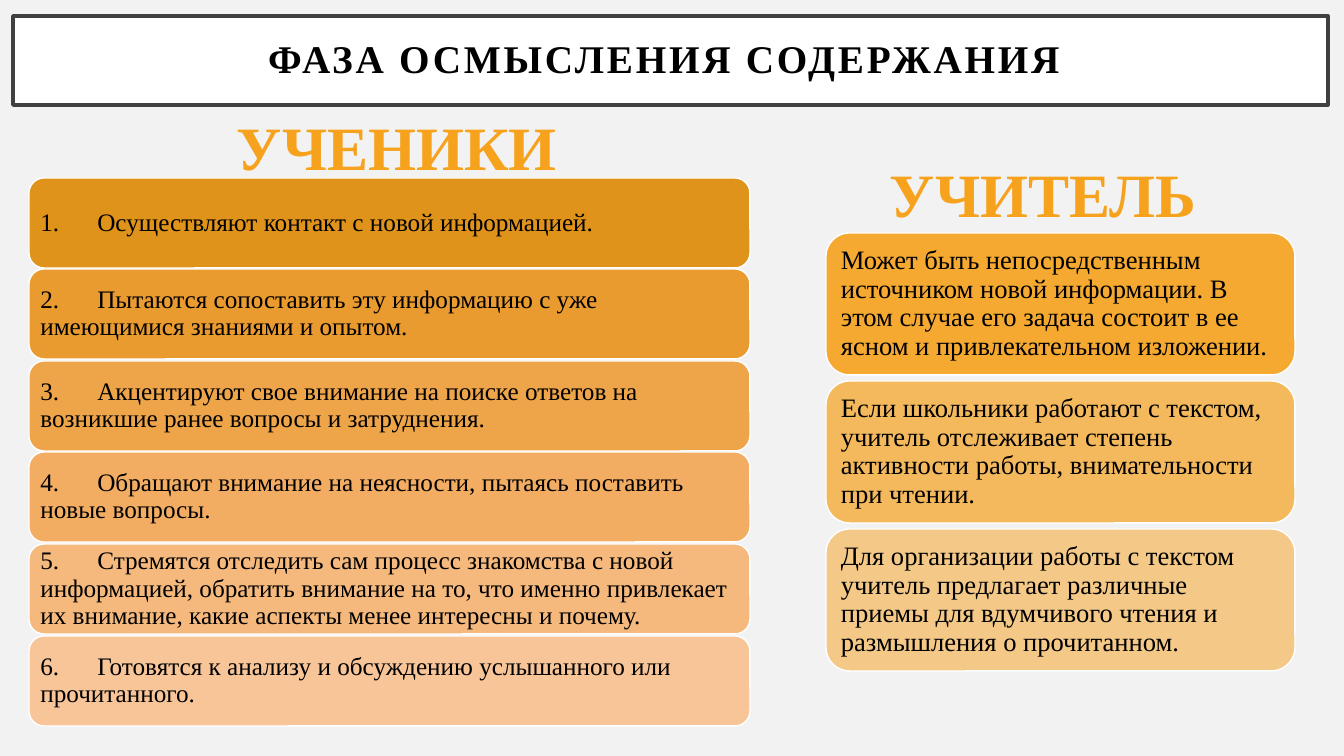
from lxml.etree import SubElement
from pptx import Presentation
from pptx.dml.color import RGBColor
from pptx.enum.shapes import MSO_SHAPE as Shape
from pptx.enum.text import MSO_ANCHOR as Anchor, PP_ALIGN as Align
from pptx.oxml.ns import qn
from pptx.util import Pt

EMU_PER_PX = 914400 / 100.8
ORANGE = "F6A21D"

STUDENTS = [
    ("Осуществляют контакт с новой информацией.", "DF931A"),
    ("Пытаются сопоставить эту информацию с уже имеющимися знаниями и опытом.",
     "E99B2F"),
    ("Акцентируют свое внимание на поиске ответов на возникшие ранее вопросы "
     "и затруднения.", "EEA449"),
    ("Обращают внимание на неясности, пытаясь поставить новые вопросы.",
     "F2AD63"),
    ("Стремятся отследить сам процесс знакомства с новой информацией, "
     "обратить внимание на то, что именно привлекает их внимание, какие "
     "аспекты менее интересны и почему.", "F5B97D"),
    ("Готовятся к анализу и обсуждению услышанного или прочитанного.",
     "F8C599"),
]
TEACHER = [
    ("Может быть непосредственным источником новой информации. В этом случае "
     "его задача состоит в ее ясном и привлекательном изложении.", 90),
    ("Если школьники работают с текстом, учитель отслеживает степень "
     "активности работы, внимательности при чтении.", 70),
    ("Для организации работы с текстом учитель предлагает различные приемы "
     "для вдумчивого чтения и размышления о прочитанном.", 50),
]


def px(length):
    return round(length * EMU_PER_PX)


def rgb(code):
    return RGBColor.from_string(code)


class PhaseSlide:
    font_name = "Times New Roman"

    def __init__(self, deck, background):
        self.slide = deck.slides.add_slide(deck.slide_layouts[6])
        fill = self.slide.background.fill
        fill.solid()
        fill.fore_color.rgb = rgb(background)

    def add_text(self, box, text, size, color="000000", bold=False, inset=None,
                 align=Align.LEFT, tab=None, spacing=None):
        frame = box.text_frame
        frame.word_wrap = True
        if inset is not None:
            frame.margin_left = frame.margin_right = px(inset)
            frame.margin_top = frame.margin_bottom = px(inset)
        para = frame.paragraphs[0]
        if tab:
            stops = SubElement(para._p.get_or_add_pPr(), qn("a:tabLst"))
            SubElement(stops, qn("a:tab"), pos=str(px(tab)), algn="l")
        para.alignment = align
        if spacing:
            para.line_spacing = spacing
        span = para.add_run()
        span.text = text
        span.font.name = self.font_name
        span.font.size = Pt(size)
        span.font.bold = bold
        span.font.color.rgb = rgb(color)
        return span

    def panel(self, kind, left, top, width, height, fill, line, weight,
              opacity=100):
        box = self.slide.shapes.add_shape(
            kind, px(left), px(top), px(width), px(height))
        box.shadow.inherit = False
        box.fill.solid()
        box.fill.fore_color.rgb = rgb(fill)
        if opacity < 100:
            solid = box._element.spPr.find(qn("a:solidFill"))
            color = solid.find(qn("a:srgbClr"))
            SubElement(color, qn("a:alpha"), val=str(opacity * 1000))
        box.line.color.rgb = rgb(line)
        box.line.width = Pt(weight)
        box.text_frame.vertical_anchor = Anchor.MIDDLE
        return box

    def title(self, text):
        box = self.panel(Shape.RECTANGLE, 13, 16, 1315, 89,
                         "FFFFFF", "404040", 2.5)
        span = self.add_text(box, text, 28, bold=True, inset=20,
                             align=Align.CENTER, spacing=0.9)
        span._r.get_or_add_rPr().set("spc", "200")

    def heading(self, text, left, top):
        box = self.slide.shapes.add_textbox(px(left), px(top), px(440), px(85))
        self.add_text(box, text, 44, ORANGE, bold=True)

    def card(self, text, left, top, width, height, fill, size, inset,
             opacity=100, tab=None):
        box = self.panel(Shape.ROUNDED_RECTANGLE, left, top, width, height,
                         fill, "FFFFFF", 1, opacity)
        self.add_text(box, text, size, inset=inset, tab=tab, spacing=0.9)


def main():
    deck = Presentation()
    deck.slide_width, deck.slide_height = px(1344), px(756)
    page = PhaseSlide(deck, "F2F2F2")

    # Teacher column
    for index, (text, opacity) in enumerate(TEACHER):
        page.card(text, 826, 233 + 148 * index, 469, 142, ORANGE, 19, 8,
                  opacity=opacity)

    # Title bar
    page.title("ФАЗА ОСМЫСЛЕНИЯ СОДЕРЖАНИЯ ")

    # Students column: first and last cards are 458 px apart
    for index, (text, fill) in enumerate(STUDENTS):
        top = 178 + 458 * index // (len(STUDENTS) - 1)
        page.card(f"{index + 1}.\t{text}", 29, top, 721, 90, fill, 18, 7,
                  tab=57)

    # Column headings
    page.heading("УЧЕНИКИ", 227, 104)
    page.heading("УЧИТЕЛЬ", 880, 151)

    deck.save("out.pptx")


if __name__ == "__main__":
    main()
